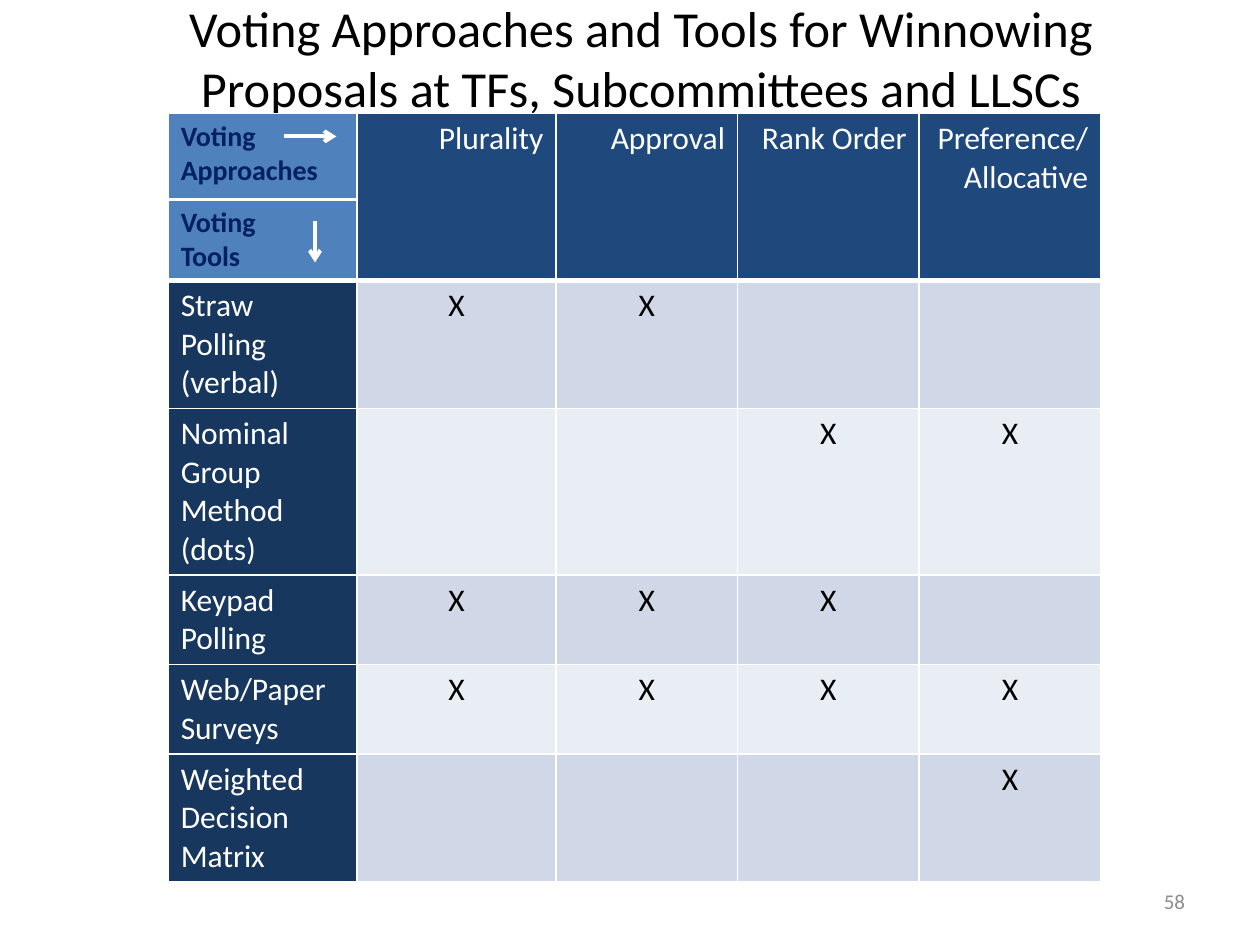
from lxml.etree import SubElement
from pptx import Presentation
from pptx.dml.color import RGBColor
from pptx.enum.shapes import MSO_CONNECTOR
from pptx.enum.text import MSO_ANCHOR, MSO_AUTO_SIZE, PP_ALIGN
from pptx.oxml import parse_xml
from pptx.oxml.ns import nsdecls, qn
from pptx.util import Cm, Pt

FONT = "Calibri"
WHITE, BLACK, NAVY = "FFFFFF", "000000", "002060"
CORNER_FILL, APPROACH_FILL, TOOL_FILL = "4F81BD", "1F497D", "17375E"
BAND_FILLS = ["D0D8E8", "E9EDF4"]
COLUMN_WIDTHS = [3.81, 4.01, 3.66, 3.66, 3.66]
ROW_HEIGHTS = [3.18, 2.54, 3.3, 1.78, 1.78, 2.54]
APPROACHES = ["Plurality", "Approval", "Rank Order", "Preference/\nAllocative"]
TOOLS = [
    ("Straw Polling (verbal)", ["X", "X", "", ""]),
    ("Nominal Group Method (dots)", ["", "", "X", "X"]),
    ("Keypad Polling", ["X", "X", "X", ""]),
    ("Web/Paper Surveys", ["X", "X", "X", "X"]),
    ("Weighted Decision Matrix", ["", "", "", "X"]),
]


def rgb(value):
    """Turn a hex string into a colour."""
    return RGBColor.from_string(value)


def write(frame, text, size, color, align, bold=False):
    """Set the text of a frame and format every run."""
    frame.text = text
    for paragraph in frame.paragraphs:
        paragraph.alignment = align
        for run in paragraph.runs:
            run.font.name = FONT
            run.font.size = Pt(size)
            run.font.bold = bold
            run.font.color.rgb = rgb(color)


def style_cell(cell, fill, bottom=1):
    """Fill a cell and give it white borders."""
    cell.fill.solid()
    cell.fill.fore_color.rgb = rgb(fill)
    properties = cell._tc.get_or_add_tcPr()
    widths = {"lnL": 1, "lnR": 1, "lnT": 1, "lnB": bottom}
    for position, (side, width) in enumerate(widths.items()):
        border = parse_xml(
            f'<a:{side} {nsdecls("a")} w="{Pt(width)}"><a:solidFill>'
            f'<a:srgbClr val="{WHITE}"/></a:solidFill></a:{side}>'
        )
        properties.insert(position, border)


def add_rule(slide, start, end, width, arrow=False):
    """Draw a white line, with an arrowhead at its end if wanted."""
    rule = slide.shapes.add_connector(
        MSO_CONNECTOR.STRAIGHT, *(Cm(value) for value in (*start, *end))
    )
    rule.line.color.rgb = rgb(WHITE)
    rule.line.width = Pt(width)
    if arrow:
        SubElement(rule.line._get_or_add_ln(), qn("a:tailEnd"), type="arrow")
    SubElement(rule._element.spPr, qn("a:effectLst"))


def add_title(slide, left, top, width, height):
    """Place and format the slide title."""
    title = slide.shapes.title
    title.left, title.top, title.width, title.height = map(Cm, (left, top, width, height))
    frame = title.text_frame
    frame.auto_size = MSO_AUTO_SIZE.NONE
    frame.vertical_anchor = MSO_ANCHOR.MIDDLE
    heading = "Voting Approaches and Tools for Winnowing Proposals at TFs, Subcommittees and LLSCs"
    write(frame, heading, 28.8, BLACK, PP_ALIGN.CENTER)


def add_voting_table(slide, left, top):
    """Build the matrix of voting tools against voting approaches."""
    matrix = slide.shapes.add_table(
        len(ROW_HEIGHTS), len(COLUMN_WIDTHS), Cm(left), Cm(top),
        Cm(sum(COLUMN_WIDTHS)), Cm(sum(ROW_HEIGHTS)),
    ).table
    matrix.first_row = matrix.horz_banding = False
    for column, width in zip(matrix.columns, COLUMN_WIDTHS):
        column.width = Cm(width)
    for row, height in zip(matrix.rows, ROW_HEIGHTS):
        row.height = Cm(height)

    corner = matrix.cell(0, 0)
    write(corner.text_frame, "Voting Approaches\nVoting\nTools", 16, NAVY, PP_ALIGN.LEFT, True)
    corner.text_frame.paragraphs[1].space_before = Pt(10)
    style_cell(corner, CORNER_FILL, bottom=3)
    for column, approach in enumerate(APPROACHES, 1):
        cell = matrix.cell(0, column)
        write(cell.text_frame, approach, 18, WHITE, PP_ALIGN.RIGHT)
        style_cell(cell, APPROACH_FILL, bottom=3)

    for row, (tool, marks) in enumerate(TOOLS, 1):
        write(matrix.cell(row, 0).text_frame, tool, 18, WHITE, PP_ALIGN.LEFT)
        style_cell(matrix.cell(row, 0), TOOL_FILL)
        for column, mark in enumerate(marks, 1):
            cell = matrix.cell(row, column)
            write(cell.text_frame, mark, 18, BLACK, PP_ALIGN.CENTER)
            style_cell(cell, BAND_FILLS[(row - 1) % 2])


def add_corner_guides(slide, left, top):
    """Divide the corner cell and point to the tools and approaches."""
    add_rule(slide, (left + 2.96, top + 2.16), (left + 2.96, top + 3), 2.25, arrow=True)
    add_rule(slide, (left + 2.33, top + 0.46), (left + 3.39, top + 0.46), 2.25, arrow=True)
    add_rule(slide, (left, top + 1.73), (left + COLUMN_WIDTHS[0], top + 1.73), 1.75)


def add_page_number(slide, left, top, width, height):
    """Write the page number."""
    frame = slide.shapes.add_textbox(*map(Cm, (left, top, width, height))).text_frame
    frame.word_wrap = True
    frame.vertical_anchor = MSO_ANCHOR.MIDDLE
    write(frame, "58", 12, "8C8C8C", PP_ALIGN.RIGHT)


def main():
    """Build and save the slide."""
    deck = Presentation()
    deck.slide_width, deck.slide_height = Cm(25.4), Cm(19.05)
    slide = deck.slides.add_slide(deck.slide_layouts.get_by_name("Title Only"))
    add_title(slide, 2.98, -0.43, 19.89, 3.18)
    add_voting_table(slide, 3.39, 2.29)
    add_corner_guides(slide, 3.39, 2.29)
    add_page_number(slide, 18.21, 17.65, 5.93, 1.02)
    deck.save("out.pptx")


if __name__ == "__main__":
    main()
